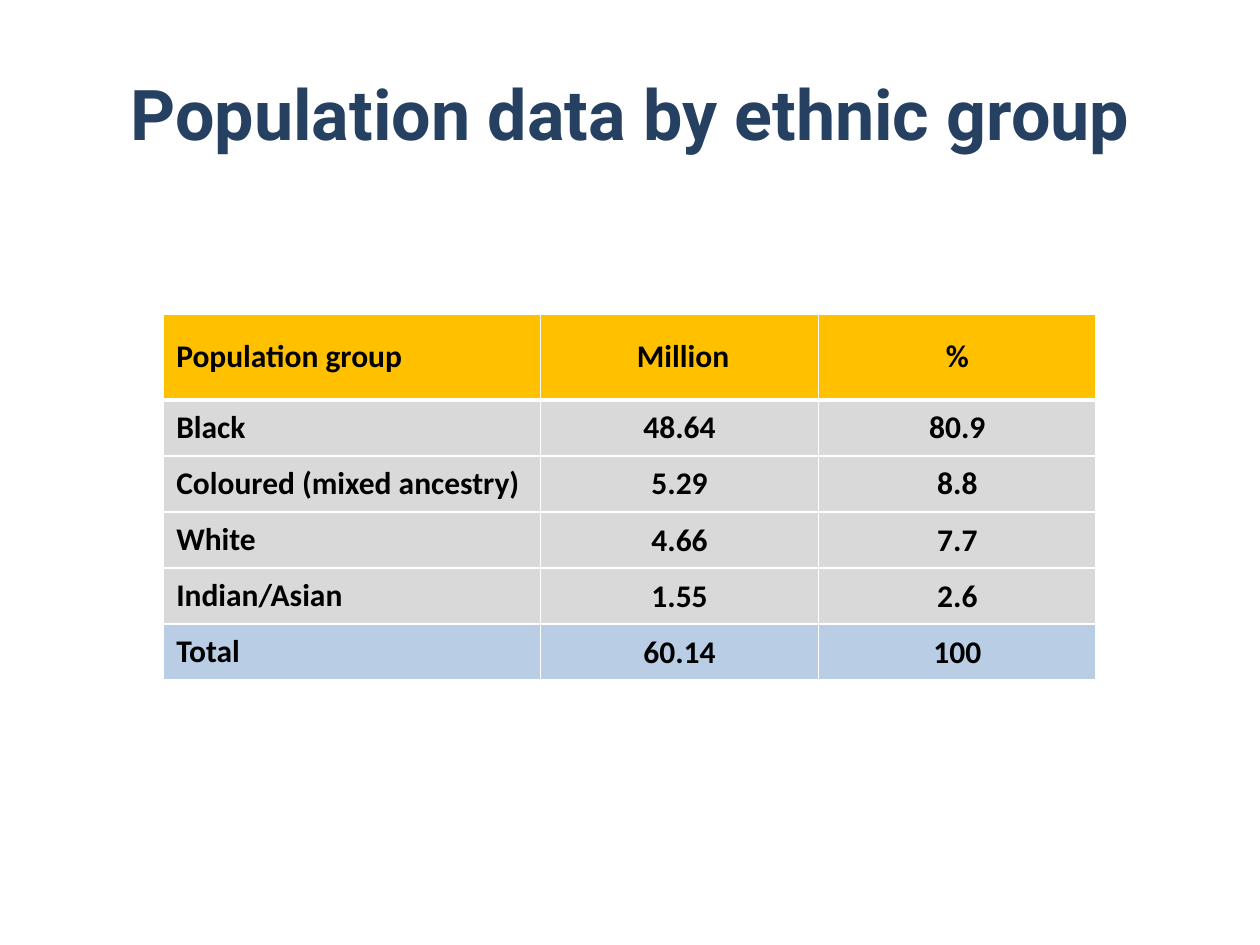
"""Build a slide with a table of population by ethnic group."""
from lxml.etree import SubElement
from pptx import Presentation
from pptx.dml.color import RGBColor
from pptx.enum.text import MSO_ANCHOR as Anchor, PP_ALIGN as Align
from pptx.oxml.ns import qn
from pptx.util import Cm, Pt


def style_text(paragraph, font_name, size, color, alignment):
    paragraph.alignment = alignment
    for run in paragraph.runs:
        run.font.name = font_name
        run.font.size = Pt(size)
        run.font.bold = True
        run.font.color.rgb = RGBColor.from_string(color)


def add_border(cell, side, width):
    properties = cell._tc.get_or_add_tcPr()
    line = SubElement(properties, qn(f"a:ln{side}"), w=str(Pt(width)))
    fill = SubElement(line, qn("a:solidFill"))
    SubElement(fill, qn("a:srgbClr"), val="FFFFFF")


presentation = Presentation()
presentation.slide_width = Cm(25.4)
presentation.slide_height = Cm(19.05)
slide = presentation.slides.add_slide(presentation.slide_layouts[6])

title = slide.shapes.add_textbox(Cm(0.3), Cm(0.97), Cm(24.8), Cm(2.59))
title.text_frame.word_wrap = True
title.text_frame.vertical_anchor = Anchor.MIDDLE
title.text_frame.text = "Population data by ethnic group"
style_text(title.text_frame.paragraphs[0], "Roboto", 40, "254061", Align.CENTER)

rows = [
    ("Population group", " Million", "%"),
    ("Black", "48.64", "80.9"),
    ("Coloured (mixed ancestry)", "5.29", "8.8"),
    ("White", "4.66", "7.7"),
    ("Indian/Asian", "1.55", "2.6"),
    ("Total", "60.14", "100"),
]
row_fills = ["FFC000"] + ["D9D9D9"] * 4 + ["B9CDE5"]
row_heights = [1.73] + [1.13] * 5
column_widths = [7.6, 5.6, 5.6]

table = slide.shapes.add_table(
    len(rows), len(column_widths), Cm(3.3), Cm(6.33),
    Cm(sum(column_widths)), Cm(sum(row_heights)),
).table
for column, width in zip(table.columns, column_widths):
    column.width = Cm(width)

for row_index, values in enumerate(rows):
    table.rows[row_index].height = Cm(row_heights[row_index])
    for column_index, value in enumerate(values):
        cell = table.cell(row_index, column_index)
        cell.text_frame.text = value
        cell.vertical_anchor = Anchor.MIDDLE
        if row_index >= 3 and column_index > 0:
            cell.margin_left = cell.margin_right = cell.margin_top = Cm(0.03)
            cell.margin_bottom = Cm(0)
        alignment = Align.CENTER if column_index else Align.LEFT
        style_text(cell.text_frame.paragraphs[0], "Calibri", 18, "000000", alignment)
        for side in "LRTB":
            under_header = (row_index, side) in [(0, "B"), (1, "T")]
            add_border(cell, side, 3 if under_header else 1)
        cell.fill.solid()
        cell.fill.fore_color.rgb = RGBColor.from_string(row_fills[row_index])

presentation.save("out.pptx")
